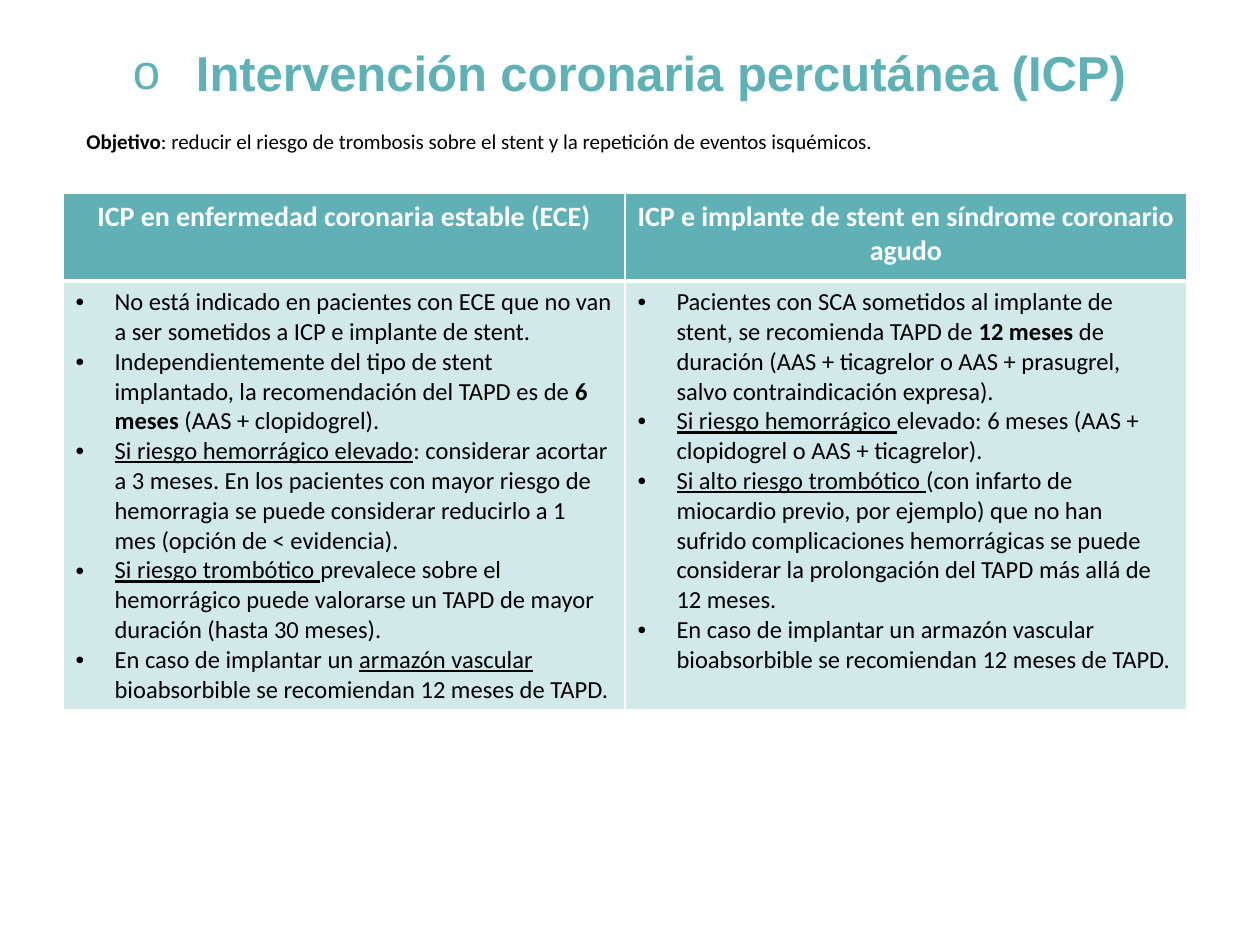
from lxml import etree
from pptx import Presentation
from pptx.dml.color import RGBColor
from pptx.enum.text import MSO_ANCHOR, PP_ALIGN
from pptx.oxml.ns import qn
from pptx.util import Pt

PX = 914400 // 126
CENTER, JUSTIFY, LEFT = PP_ALIGN.CENTER, PP_ALIGN.JUSTIFY, PP_ALIGN.LEFT
BOTTOM, TOP = MSO_ANCHOR.BOTTOM, MSO_ANCHOR.TOP
TEAL, WHITE, BLACK = "5FB1B6", "FFFFFF", "000000"

TITLE = [("Intervención coronaria percutánea (ICP)", "b")]
GOAL = [
    ("Objetivo", "b"),
    (": reducir el riesgo de trombosis sobre el stent y la repetición de eventos isquémicos.", ""),
]
HEADERS = [
    "ICP en enfermedad coronaria estable (ECE)",
    "ICP e implante de stent en síndrome coronario agudo",
]
# Each paragraph is a list of (text, style) spans: b bold, u underlined.
STABLE = [
    [("No está indicado en pacientes con ECE que no van a ser sometidos a ICP e implante de stent.", "")],
    [("Independientemente del tipo de stent implantado, la recomendación del TAPD es de ", ""),
     ("6 meses", "b"), (" (AAS + clopidogrel).", "")],
    [("Si riesgo hemorrágico elevado", "u"),
     (": considerar acortar a 3 meses. En los pacientes con mayor riesgo de hemorragia "
      "se puede considerar reducirlo a 1 mes (opción de < evidencia).", "")],
    [("Si riesgo trombótico ", "u"),
     ("prevalece sobre el hemorrágico puede valorarse un TAPD de mayor duración (hasta 30 meses).", "")],
    [("En caso de implantar un ", ""), ("armazón vascular ", "u"),
     ("bioabsorbible se recomiendan 12 meses de TAPD.", "")],
]
ACUTE = [
    [("Pacientes con SCA sometidos al implante de stent, se recomienda TAPD de ", ""),
     ("12 meses ", "b"),
     ("de duración (AAS + ticagrelor o AAS + prasugrel, salvo contraindicación expresa).", "")],
    [("Si riesgo hemorrágico ", "u"),
     ("elevado: 6 meses (AAS + clopidogrel o AAS + ticagrelor).", "")],
    [("Si alto riesgo trombótico ", "u"),
     ("(con infarto de miocardio previo, por ejemplo) que no han sufrido complicaciones "
      "hemorrágicas se puede considerar la prolongación del TAPD más allá de 12 meses.", "")],
    [("En caso de implantar un armazón vascular bioabsorbible se recomiendan 12 meses de TAPD.", "")],
]


def px(length):
    return length * PX


def rgb(color):
    return RGBColor.from_string(color)


def add_bullet(para, mark, indent):
    """Give the paragraph a hanging bullet; indent is in px."""
    properties = para._p.get_or_add_pPr()
    properties.set("marL", str(px(indent)))
    properties.set("indent", str(-px(indent)))
    etree.SubElement(properties, qn("a:buFont"), typeface="Arial")
    etree.SubElement(properties, qn("a:buChar"), char=mark)


def set_borders(cell, bottom_width):
    """Draw white lines round the cell, 1 pt except at the bottom."""
    properties = cell._tc.get_or_add_tcPr()
    for position, side in enumerate("LRTB"):
        width = bottom_width if side == "B" else 1
        line = etree.Element(qn(f"a:ln{side}"), w=str(Pt(width)))
        fill = etree.SubElement(line, qn("a:solidFill"))
        etree.SubElement(fill, qn("a:srgbClr"), val=WHITE)
        properties.insert(position, line)


def set_fill(cell, color, opacity=100):
    cell.fill.solid()
    cell.fill.fore_color.rgb = rgb(color)
    if opacity < 100:
        shade = cell._tc.tcPr.find(qn("a:solidFill")).find(qn("a:srgbClr"))
        etree.SubElement(shade, qn("a:alpha"), val=str(opacity * 1000))


class SlideBuilder:
    """Holds the text style and the current slide."""

    def __init__(self, slide, font="Calibri"):
        self.slide = slide
        self.font = font

    def add_paragraphs(self, frame, paragraphs, size, color, align=LEFT, font=None,
                       bullet=None, indent=0, spacing=None):
        for index, spans in enumerate(paragraphs):
            para = frame.add_paragraph() if index else frame.paragraphs[0]
            para.alignment = align
            if spacing:
                para.line_spacing = spacing
            if bullet:
                add_bullet(para, bullet, indent)
            for text, style in spans:
                span = para.add_run()
                span.text = text
                span.font.name = font or self.font
                span.font.size = Pt(size)
                span.font.color.rgb = rgb(color)
                span.font.bold = "b" in style
                span.font.underline = "u" in style

    def add_text(self, left, top, width, height, spans, size, color, anchor=TOP, **style):
        box = self.slide.shapes.add_textbox(px(left), px(top), px(width), px(height))
        box.text_frame.word_wrap = True
        box.text_frame.vertical_anchor = anchor
        self.add_paragraphs(box.text_frame, [spans], size, color, spacing=0.9, **style)

    def add_table(self, left, top, column_width, row_heights, headers, bodies):
        frame = self.slide.shapes.add_table(
            2, len(headers), px(left), px(top),
            px(column_width * len(headers)), px(sum(row_heights)))
        table = frame.table
        table.horz_banding = False
        for row, height in zip(table.rows, row_heights):
            row.height = px(height)
        for index, (header, body) in enumerate(zip(headers, bodies)):
            table.columns[index].width = px(column_width)
            head_cell, body_cell = table.cell(0, index), table.cell(1, index)
            set_fill(head_cell, TEAL)
            set_borders(head_cell, 3)
            self.add_paragraphs(head_cell.text_frame, [[(header, "b")]], 16, WHITE, CENTER)
            set_fill(body_cell, TEAL, 28)
            set_borders(body_cell, 1)
            self.add_paragraphs(body_cell.text_frame, body, 14, BLACK, bullet="•", indent=39)


def main():
    deck = Presentation()
    deck.slide_width, deck.slide_height = px(1260), px(945)
    builder = SlideBuilder(deck.slides.add_slide(deck.slide_layouts[6]))
    builder.add_text(94, 34, 1071, 74, TITLE, 28, TEAL, BOTTOM,
                     align=CENTER, font="Arial", bullet="o", indent=63)
    builder.add_text(74, 125, 1114, 43, GOAL, 12, BLACK, align=JUSTIFY)
    builder.add_table(63, 193, 562, (88, 429), HEADERS, (STABLE, ACUTE))
    deck.save("out.pptx")


if __name__ == "__main__":
    main()
